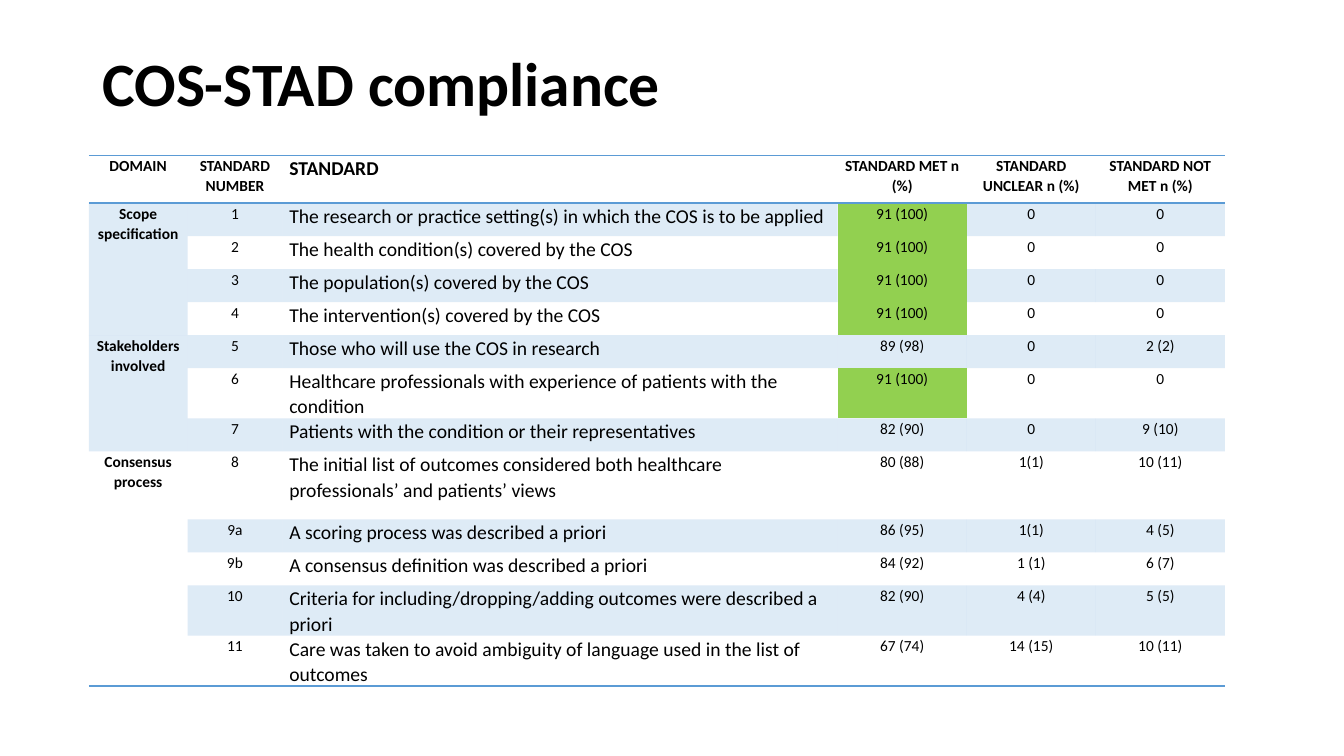
"""Build the COS-STAD compliance slide with its table of standards."""
from lxml import etree
from pptx import Presentation
from pptx import util as u
from pptx.dml.color import RGBColor
from pptx.enum import text
from pptx.oxml import ns

TITLE = "COS-STAD compliance"
HEADINGS = ("DOMAIN", "STANDARD NUMBER", "STANDARD", "STANDARD MET n (%)",
            "STANDARD UNCLEAR n (%)", "STANDARD NOT MET n (%)")
DOMAINS = [
    ("Scope specification", [
        ("1", "The research or practice setting(s) in which the COS is to be applied", "91 (100)", "0", "0"),
        ("2", "The health condition(s) covered by the COS", "91 (100)", "0", "0"),
        ("3", "The population(s) covered by the COS", "91 (100)", "0", "0"),
        ("4", "The intervention(s) covered by the COS", "91 (100)", "0", "0"),
    ]),
    ("Stakeholders involved", [
        ("5", "Those who will use the COS in research", "89 (98)", "0", "2 (2)"),
        ("6", "Healthcare professionals with experience of patients with the condition", "91 (100)", "0", "0"),
        ("7", "Patients with the condition or their representatives", "82 (90)", "0", "9 (10)"),
    ]),
    ("Consensus process", [
        ("8", "The initial list of outcomes considered both healthcare professionals’ and patients’ views",
         "80 (88)", "1(1)", "10 (11)"),
        ("9a", "A scoring process was described a priori", "86 (95)", "1(1)", "4 (5)"),
        ("9b", "A consensus definition was described a priori", "84 (92)", "1 (1)", "6 (7)"),
        ("10", "Criteria for including/dropping/adding outcomes were described a priori",
         "82 (90)", "4 (4)", "5 (5)"),
        ("11", "Care was taken to avoid ambiguity of language used in the list of outcomes",
         "67 (74)", "14 (15)", "10 (11)"),
    ]),
]

BLACK = RGBColor(0x00, 0x00, 0x00)
BLUE = RGBColor(0x5B, 0x9B, 0xD5)
GREEN = RGBColor(0x92, 0xD0, 0x50)
FONT = "Calibri"
PLAIN_STYLE = "{2D5ABB26-0587-4C30-8999-92F81FD0307C}"
TINT_ALPHA = 20
COLUMN_WIDTHS = (70.6, 67.7, 396.7, 92.2, 92.2, 92.2)
HEADER_HEIGHT, ROW_HEIGHT, TALL_HEIGHT = 34, 23.6, 48.5
TALL_STANDARD = "8"
TABLE_LEFT, TABLE_TOP, TABLE_HEIGHT = 63.4, 111, 377.3
STANDARD_COLUMN = 2
CELL_FORMAT = {"margin_left": u.Pt(5), "margin_right": u.Pt(5), "margin_top": 0,
               "margin_bottom": 0, "vertical_anchor": text.MSO_ANCHOR.TOP}


def apply(target, values):
    for name, value in values.items():
        setattr(target, name, value)


def write(paragraph, words, size, bold):
    run = paragraph.add_run()
    run.text = words
    apply(run.font, {"name": FONT, "size": u.Pt(size), "bold": bold})
    run.font.color.rgb = BLACK


def fill_cell(cell, color, alpha=100):
    if color is None:
        cell.fill.background()
        return
    cell.fill.solid()
    cell.fill.fore_color.rgb = color
    if alpha < 100:
        swatch = cell._tc.tcPr.find(".//" + ns.qn("a:srgbClr"))
        etree.SubElement(swatch, ns.qn("a:alpha"), val=str(alpha * 1000))


def rule_cell(cell, sides):
    for position, side in enumerate(sides):
        line = etree.Element(ns.qn("a:ln" + side), w=str(u.Pt(1)))
        solid = etree.SubElement(line, ns.qn("a:solidFill"))
        etree.SubElement(solid, ns.qn("a:srgbClr"), val=str(BLUE))
        cell._tc.get_or_add_tcPr().insert(position, line)


def write_cell(cell, words, column, bold):
    is_standard = column == STANDARD_COLUMN
    apply(cell, CELL_FORMAT)
    paragraph = cell.text_frame.paragraphs[0]
    apply(paragraph, {
        "alignment": text.PP_ALIGN.LEFT if is_standard else text.PP_ALIGN.CENTER,
        "line_spacing": 1.07, "space_after": u.Pt(8)})
    write(paragraph, words, 14 if is_standard else 11, bold)


def add_title(slide):
    box = slide.shapes.add_textbox(u.Pt(66), u.Pt(28.8), u.Pt(828), u.Pt(65.5))
    apply(box.text_frame, {"word_wrap": True, "vertical_anchor": text.MSO_ANCHOR.MIDDLE})
    paragraph = box.text_frame.paragraphs[0]
    paragraph.line_spacing = 0.9
    write(paragraph, TITLE, 44, True)


def add_standards(slide):
    standards = [standard for _, group in DOMAINS for standard in group]
    last_row = len(standards)
    frame = slide.shapes.add_table(last_row + 1, len(HEADINGS), u.Pt(TABLE_LEFT), u.Pt(TABLE_TOP),
                                   u.Pt(sum(COLUMN_WIDTHS)), u.Pt(TABLE_HEIGHT))
    table = frame.table
    apply(table, {"first_row": False, "horz_banding": False})
    table._tbl.tblPr.find(ns.qn("a:tableStyleId")).text = PLAIN_STYLE
    for column, width in zip(table.columns, COLUMN_WIDTHS):
        column.width = u.Pt(width)
    heights = [HEADER_HEIGHT] + [TALL_HEIGHT if standard[0] == TALL_STANDARD else ROW_HEIGHT
                                 for standard in standards]
    for row, height in zip(table.rows, heights):
        row.height = u.Pt(height)
    frame.height = u.Pt(TABLE_HEIGHT)

    for column, heading in enumerate(HEADINGS):
        cell = table.cell(0, column)
        write_cell(cell, heading, column, True)
        fill_cell(cell, None)
        rule_cell(cell, "TB")

    for row, standard in enumerate(standards, 1):
        band = BLUE if row % 2 else None
        for column, words in enumerate(standard, 1):
            cell = table.cell(row, column)
            write_cell(cell, words, column, False)
            if words.endswith("(100)"):
                fill_cell(cell, GREEN)
            else:
                fill_cell(cell, band, TINT_ALPHA)
            if row == last_row:
                rule_cell(cell, "B")

    first = 1
    for domain, group in DOMAINS:
        last = first + len(group) - 1
        cell = table.cell(first, 0)
        cell.merge(table.cell(last, 0))
        write_cell(cell, domain, 0, True)
        fill_cell(cell, BLUE if first % 2 else None, TINT_ALPHA)
        if last == last_row:
            rule_cell(cell, "B")
            rule_cell(table.cell(last, 0), "B")
        first = last + 1


def main():
    presentation = Presentation()
    apply(presentation, {"slide_width": u.Pt(960), "slide_height": u.Pt(540)})
    slide = presentation.slides.add_slide(presentation.slide_layouts[6])
    add_title(slide)
    add_standards(slide)
    presentation.save("out.pptx")


if __name__ == "__main__":
    main()
